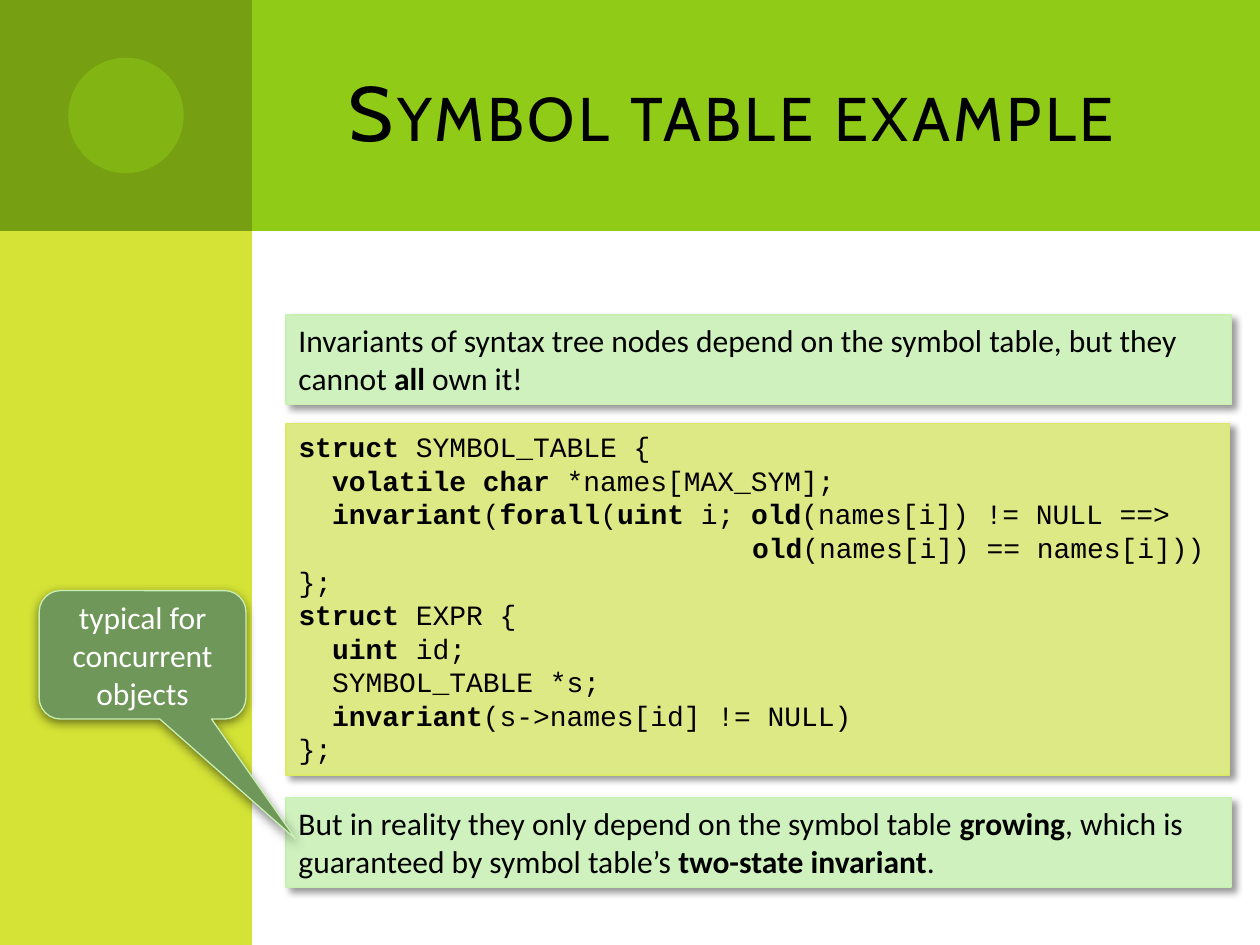
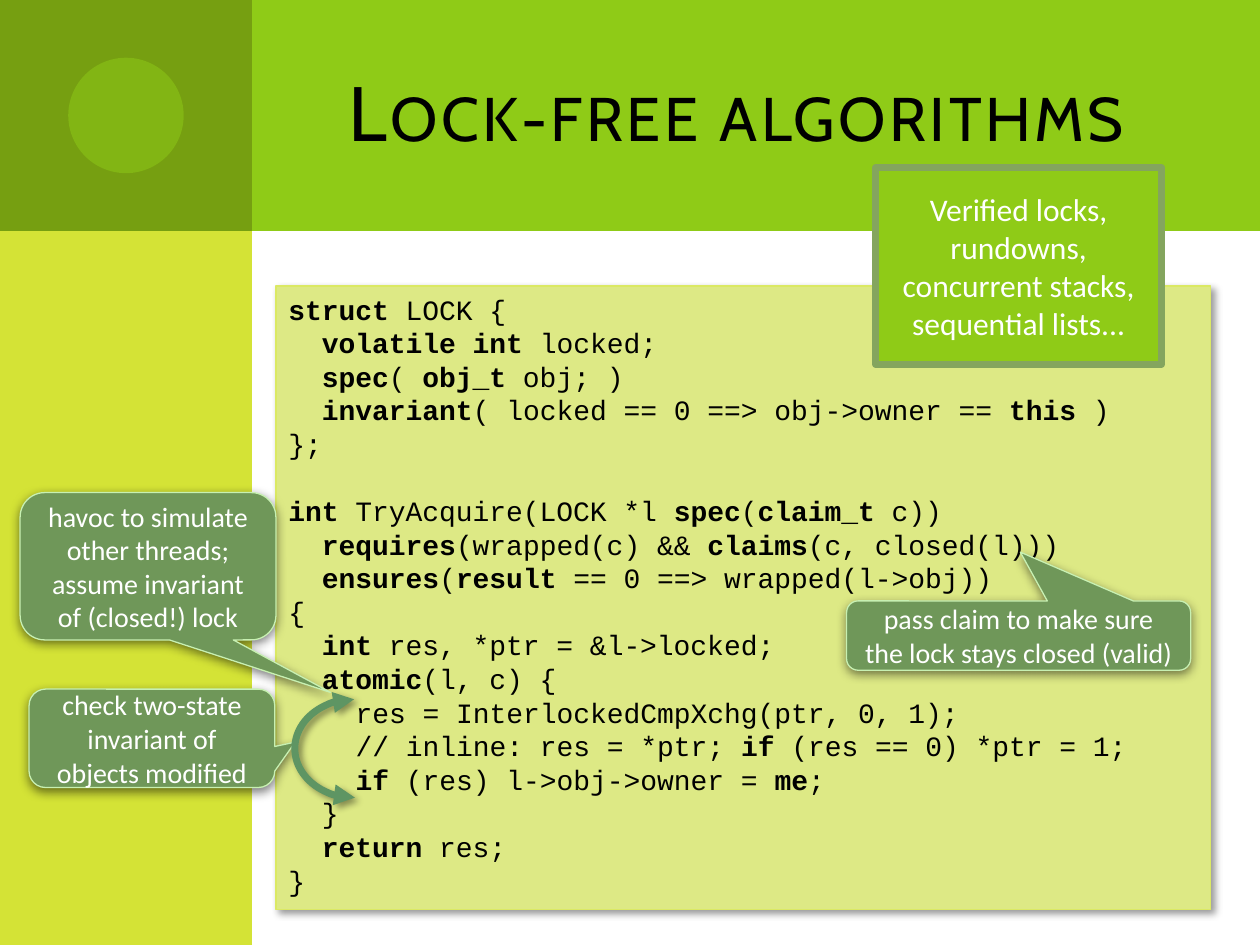
from pptx import Presentation
from pptx.dml.color import RGBColor
from pptx.enum.shapes import MSO_SHAPE
from pptx.enum.text import MSO_ANCHOR, MSO_AUTO_SIZE, PP_ALIGN
from pptx.oxml.ns import qn
from pptx.util import Pt
from lxml.etree import SubElement

# Content: text between ** marks is bold; boxes are (left, top, width, height)
SYMBOL_CODE = """
**struct** SYMBOL_TABLE {
  **volatile char** *names[MAX_SYM];
  **invariant**(**forall**(**uint** i; **old**(names[i]) != NULL ==>
                           **old**(names[i]) == names[i]))
};
**struct** EXPR {
  **uint** id;
  SYMBOL_TABLE *s;
  **invariant**(s->names[id] != NULL)
};
"""
LOCK_CODE = """
**struct** LOCK {
  **volatile int** locked;
  **spec**( **obj_t** obj; )
  **invariant**( locked == 0 ==> obj->owner == **this** )
};

**int** TryAcquire(LOCK *l **spec**(**claim_t** c))
  **requires**(wrapped(c) && **claims**(c, closed(l)))
  **ensures**(**result** == 0 ==> wrapped(l->obj))
{
  **int** res, *ptr = &l->locked;
  **atomic**(l, c) {
    res = InterlockedCmpXchg(ptr, 0, 1);
    // inline: res = *ptr; **if** (res == 0) *ptr = 1;
    **if** (res) l->obj->owner = **me**;
  }
  **return** res;
}
"""
SLIDES = [
    {
        "title": "Symbol table example",
        "code": (SYMBOL_CODE, (163.5, 242, 539.3, 200.9)),
        "notes": [
            ("Invariants of syntax tree nodes depend on the symbol table, "
             "but they cannot **all** own it!", (163.5, 180, 540, 51)),
            ("But in reality they only depend on the symbol table **growing**, which is "
             "guaranteed by symbol table’s **two-state invariant**.", (163.5, 455.8, 540, 51)),
        ],
        # text, box, font size, pointer tip
        "callouts": [
            ("typical for concurrent objects", (22.4, 337.5, 118.2, 73.4), 18, (0.741, 1.435)),
        ],
    },
    {
        "title": "Lock-free algorithms",
        "code": (LOCK_CODE, (157.7, 163.4, 534.2, 356.4)),
        "callouts": [
            ("havoc to simulate other threads; assume invariant of (closed!) lock",
             (11.5, 281.5, 146.2, 84.2), 16, (0.713, 0.856)),
            ("check two-state invariant of objects modified",
             (16.6, 393.8, 140.4, 56.2), 16, (0.583, 0.039)),
            ("pass claim to make sure the lock stays closed (valid)",
             (483.8, 343.4, 196.6, 39.6), 16, (0.005, -1.205)),
        ],
        "arc": (168.5, 399.6, 67.7, 56.2),
        "badge": ("Verified locks, rundowns, concurrent stacks, sequential lists...",
                  (500.4, 95.8, 163.4, 112.3)),
    },
]

# Shared look
COLORS = {
    "band": "8FCB17", "side": "D4E336", "corner": "769F11",
    "code": "DDE985", "code_line": "DBE964",
    "note": "CFF1BE", "pale_line": "C7F0B2",
    "callout": "6F9759", "arc": "5E9563", "badge_line": "84A55E",
    "black": "000000", "white": "FFFFFF",
}
TITLE_FONT, BODY_FONT, CODE_FONT = "Cabin", "Calibri", "Courier New"
CODE_SIZE, CODE_PITCH, CODE_CHAR = 16, 19.2, 9.6
FLAT_SHADOW = (40, 4, 3, 45)    # opacity %, blur, distance, angle
RAISED_SHADOW = (50, 6, 2, 90)


def rgb(name):
    return RGBColor.from_string(COLORS[name])


def add_shadow(s, opacity, blur, distance, angle):
    effects = s.element.spPr.find(qn("a:effectLst"))
    shadow = SubElement(effects, qn("a:outerShdw"), blurRad=str(Pt(blur)), dist=str(Pt(distance)),
                        dir=str(angle * 60000), algn="ctr", rotWithShape="0")
    color = SubElement(shadow, qn("a:srgbClr"), val=COLORS["black"])
    SubElement(color, qn("a:alpha"), val=str(opacity * 1000))


def add_box(slide, kind, box, fill=None, line=None, width=0.75, shadow=None):
    s = slide.shapes.add_shape(kind, *(Pt(v) for v in box))
    s.shadow.inherit = False
    if fill:
        s.fill.solid()
        s.fill.fore_color.rgb = rgb(fill)
    else:
        s.fill.background()
    if line:
        s.line.color.rgb = rgb(line)
        s.line.width = Pt(width)
    else:
        s.line.fill.background()
    if shadow:
        add_shadow(s, *shadow)
    return s


def add_runs(p, text, font, size, color):
    for i, part in enumerate(text.split("**")):
        if part:
            r = p.add_run()
            r.text = part
            r.font.name, r.font.size, r.font.bold = font, Pt(size), i % 2 == 1
            r.font.color.rgb = rgb(color)


def write(s, text, size, color, align=PP_ALIGN.LEFT, anchor=MSO_ANCHOR.TOP):
    tf = s.text_frame
    tf.word_wrap = True
    tf.vertical_anchor = anchor
    tf.paragraphs[0].alignment = align
    add_runs(tf.paragraphs[0], text, BODY_FONT, size, color)


def write_centered(s, text, size):
    write(s, text, size, "white", PP_ALIGN.CENTER, MSO_ANCHOR.MIDDLE)


def add_code(slide, code, box):
    s = add_box(slide, MSO_SHAPE.RECTANGLE, box, "code", "code_line", shadow=FLAT_SHADOW)
    tf = s.text_frame
    tf.word_wrap = True
    tf.vertical_anchor = MSO_ANCHOR.TOP
    p, gap = None, 0
    for line in code.strip().split("\n"):
        if not line:
            gap += CODE_PITCH
            continue
        p = tf.add_paragraph() if p else tf.paragraphs[0]
        p.alignment = PP_ALIGN.LEFT
        p.line_spacing = Pt(CODE_PITCH)
        p.space_before = Pt(gap)
        gap = 0
        # Leading blanks become a left margin
        text = line.lstrip()
        indent = len(line) - len(text)
        p._p.get_or_add_pPr().set("marL", str(Pt(indent * CODE_CHAR)))
        add_runs(p, text, CODE_FONT, CODE_SIZE, "black")


def add_callout(slide, text, box, size, tip):
    s = add_box(slide, MSO_SHAPE.ROUNDED_RECTANGULAR_CALLOUT, box, "callout", "pale_line",
                shadow=RAISED_SHADOW)
    s.adjustments[0], s.adjustments[1] = tip
    write_centered(s, text, size)


def add_double_arc(slide, box):
    s = add_box(slide, MSO_SHAPE.ARC, box, line="arc", width=4, shadow=FLAT_SHADOW)
    s.adjustments[0], s.adjustments[1] = 162, 54.64
    s.element.spPr.find(qn("a:xfrm")).set("flipH", "1")
    for end in ("a:headEnd", "a:tailEnd"):
        SubElement(s.element.spPr.find(qn("a:ln")), qn(end), type="triangle")


def set_title(slide, text):
    tf = slide.shapes.title.text_frame
    tf.text = text
    tf.auto_size = MSO_AUTO_SIZE.NONE
    tf.vertical_anchor = MSO_ANCHOR.MIDDLE
    p = tf.paragraphs[0]
    p.alignment = PP_ALIGN.RIGHT
    r = p.runs[0]
    r.font.name, r.font.size = TITLE_FONT, Pt(44)
    r.font.color.rgb = rgb("black")
    r.font._element.set("cap", "small")
    r.font._element.set("spc", "200")


def decorate_layout(layout, slide):
    """Draw the bands and place the title once, on the layout."""
    bands = [
        (MSO_SHAPE.RECTANGLE, (36, 0, 684, 132), "band"),
        (MSO_SHAPE.RECTANGLE, (0, 0, 144, 540), "side"),
        (MSO_SHAPE.RECTANGLE, (0, 0, 144, 132), "corner"),
        (MSO_SHAPE.OVAL, (39, 33, 66, 66), "band"),
    ]
    tree = layout.element.cSld.spTree
    for i, (kind, box, fill) in enumerate(bands):
        s = add_box(slide, kind, box, fill)
        if kind == MSO_SHAPE.OVAL:
            color = s.element.spPr.find(qn("a:solidFill"))[0]
            SubElement(color, qn("a:alpha"), val="50000")
        tree.insert(2 + i, s.element)
    title = layout.placeholders[0]
    title.left, title.top, title.width, title.height = Pt(192), Pt(18), Pt(492), Pt(90)


def main():
    prs = Presentation()
    prs.slide_width, prs.slide_height = Pt(720), Pt(540)
    layout = prs.slide_layouts[5]
    for n, content in enumerate(SLIDES):
        slide = prs.slides.add_slide(layout)
        if n == 0:
            decorate_layout(layout, slide)
        set_title(slide, content["title"])
        add_code(slide, *content["code"])
        for text, box in content.get("notes", []):
            s = add_box(slide, MSO_SHAPE.RECTANGLE, box, "note", "pale_line", shadow=FLAT_SHADOW)
            write(s, text, 18, "black")
        for callout in content["callouts"]:
            add_callout(slide, *callout)
        if "arc" in content:
            add_double_arc(slide, content["arc"])
        if "badge" in content:
            text, box = content["badge"]
            s = add_box(slide, MSO_SHAPE.RECTANGLE, box, "band", "badge_line", 4)
            write_centered(s, text, 18)
    prs.save("out.pptx")


if __name__ == "__main__":
    main()
